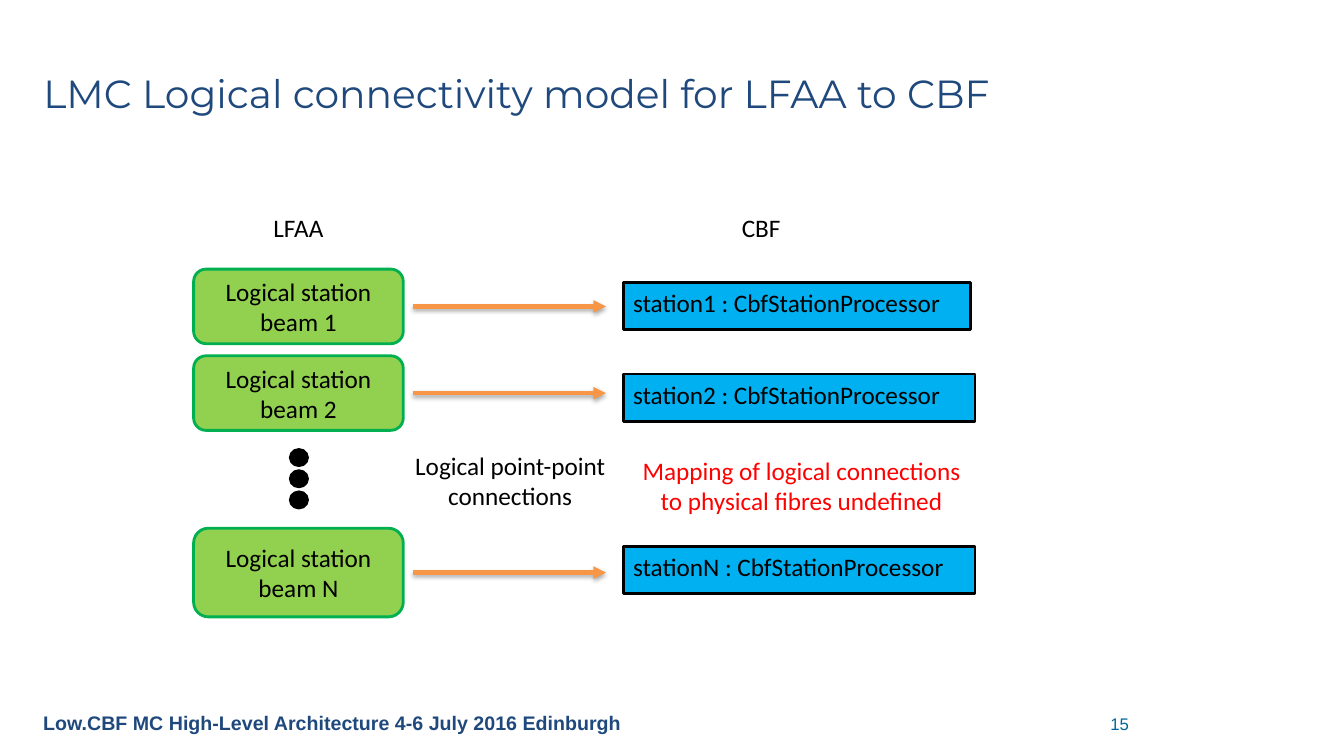
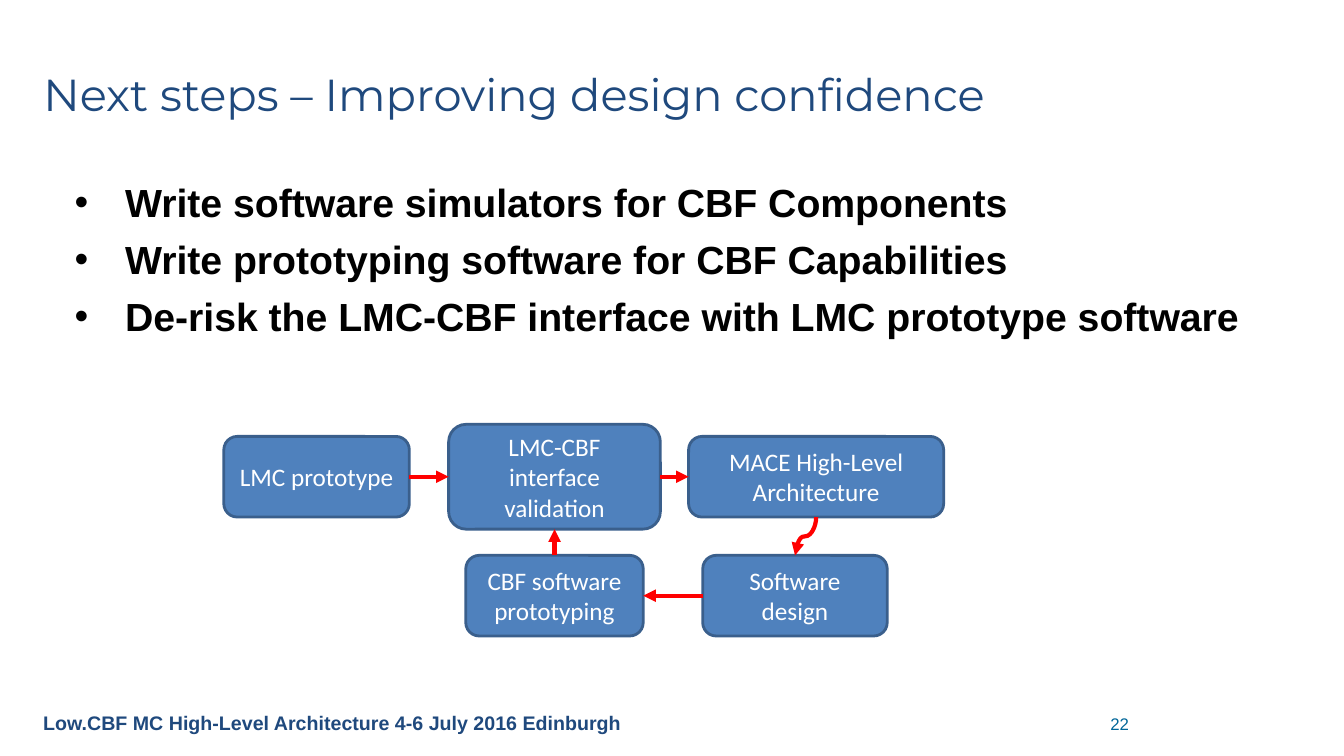
from pptx import Presentation
from pptx.dml.color import RGBColor
from pptx.enum.shapes import MSO_CONNECTOR, MSO_SHAPE
from pptx.enum.text import MSO_ANCHOR, MSO_AUTO_SIZE, PP_ALIGN
from pptx.oxml import parse_xml
from pptx.oxml.ns import nsdecls, qn
from pptx.util import Emu, Pt

EMU_PER_PX = 9144  # 100 px to the inch

COLOURS = {
    "navy": "1F497D", "teal": "006699", "black": "000000", "white": "FFFFFF",
    "red": "FF0000", "orange": "F79646", "lime": "92D050", "green": "00B050",
    "sky": "00B0F0", "blue": "4F81BD", "steel": "3A5F8C",
}

TITLE = {"name": "Montserrat", "size": Pt(28), "bold": False}
BULLET = {"name": "Arial", "size": Pt(28), "bold": True}
FOOTER = {"name": "Arial", "size": Pt(14), "bold": True}
PAGE_NUMBER = {"name": "Arial", "size": Pt(12), "bold": False}
LABEL = {"name": "Calibri", "size": Pt(18), "bold": False}

FOOTER_TEXT = "Low.CBF MC High-Level Architecture 4-6 July 2016 Edinburgh"
TOP, LEFT, BOTTOM, RIGHT = range(4)
TITLE_ONLY, TITLE_AND_BODY = 5, 1

SHADOW = (
    '<a:outerShdw blurRad="40000" dist="23000" dir="5400000" rotWithShape="0">'
    '<a:srgbClr val="000000"><a:alpha val="35000"/></a:srgbClr></a:outerShdw>'
)


def px(length):
    return Emu(round(length * EMU_PER_PX))


def rgb(colour):
    return RGBColor.from_string(COLOURS[colour])


def write_text(shape, lines, style, colour="black", align=PP_ALIGN.CENTER,
               anchor=MSO_ANCHOR.TOP):
    frame = shape.text_frame
    frame.word_wrap = True
    frame.auto_size = MSO_AUTO_SIZE.NONE
    frame.vertical_anchor = anchor
    frame.text = "\n".join(lines)
    for para in frame.paragraphs:
        para.alignment = align
        for span in para.runs:
            for name, value in style.items():
                setattr(span.font, name, value)
            span.font.color.rgb = rgb(colour)


def place(shape, left, top, width, height):
    shape.left, shape.top = px(left), px(top)
    shape.width, shape.height = px(width), px(height)


def add_label(page, area, lines, style=LABEL, **options):
    box = page.shapes.add_textbox(*map(px, area))
    write_text(box, lines, style, **options)


def add_box(page, kind, area, fill, line):
    box = page.shapes.add_shape(kind, *map(px, area))
    box.shadow.inherit = False
    box.fill.solid()
    box.fill.fore_color.rgb = rgb(fill)
    box.line.color.rgb = rgb(line)
    box.line.width = Pt(2)
    return box


def add_rounded_box(page, area, text, fill, line, colour):
    box = add_box(page, MSO_SHAPE.ROUNDED_RECTANGLE, area, fill, line)
    write_text(box, [text], LABEL, colour, anchor=MSO_ANCHOR.MIDDLE)
    return box


def add_arrow(page, colour, start=(0, 0), end=(0, 0), kind=MSO_CONNECTOR.STRAIGHT,
              effect=""):
    arrow = page.shapes.add_connector(kind, *map(px, start + end))
    arrow.line.color.rgb = rgb(colour)
    arrow.line.width = Pt(3)
    properties = arrow.element.spPr
    properties.find(qn("a:ln")).append(
        parse_xml(f'<a:tailEnd type="triangle" {nsdecls("a")}/>'))
    properties.append(
        parse_xml(f'<a:effectLst {nsdecls("a")}>{effect}</a:effectLst>'))
    return arrow


def join(page, source, source_side, target, target_side,
         kind=MSO_CONNECTOR.STRAIGHT):
    arrow = add_arrow(page, "red", kind=kind)
    arrow.begin_connect(source, source_side)
    arrow.end_connect(target, target_side)
    return arrow


def turn_downward(arrow):
    """Make a curve that runs down and to the left leave and arrive vertically."""
    across, down = arrow.width, arrow.height
    arrow.left, arrow.top = (Emu(arrow.left + (across - down) // 2),
                             Emu(arrow.top + (down - across) // 2))
    arrow.width, arrow.height = down, across
    frame = arrow.element.spPr.find(qn("a:xfrm"))
    for name, value in {"rot": "5400000", "flipH": "0", "flipV": "0"}.items():
        frame.set(name, value)


def add_page(deck, layout, title, number, title_size):
    """Add a slide with the shared title style, footer and page number."""
    page = deck.slides.add_slide(deck.slide_layouts[layout])
    place(page.shapes.title, 33, 30, 1267, 125)
    write_text(page.shapes.title, [title], TITLE | {"size": Pt(title_size)}, "navy",
               PP_ALIGN.LEFT, MSO_ANCHOR.MIDDLE)
    add_label(page, (33, 700, 633, 34), [FOOTER_TEXT], FOOTER,
              colour="navy", align=PP_ALIGN.LEFT)
    add_label(page, (1044, 703, 133, 30), [str(number)], PAGE_NUMBER, colour="teal")
    return page


def add_bullets(page, lines):
    body = page.placeholders[1]
    place(body, 64, 172, 1200, 207)
    write_text(body, lines, BULLET, align=PP_ALIGN.LEFT)
    for index, para in enumerate(body.text_frame.paragraphs):
        properties = para._p.get_or_add_pPr()
        properties.set("marL", str(px(50)))
        properties.set("indent", str(px(-50)))
        para.space_before = Pt(7 if index else 0)


def build_connectivity(deck):
    page = add_page(deck, TITLE_ONLY,
                    "LMC Logical connectivity model for LFAA to CBF", 15, 28)
    add_label(page, (226, 206, 140, 40), ["LFAA"])
    add_label(page, (685, 206, 140, 40), ["CBF"])

    # Name, beam top, beam height, processor top, processor width
    stations = [
        ("1", 267, 74, 280, 345),
        ("2", 353, 74, 371, 349),
        ("N", 524, 88, 542, 349),
    ]
    for name, beam_top, beam_height, processor_top, processor_width in stations:
        add_rounded_box(page, (192, beam_top, 208, beam_height),
                        f"Logical station beam {name}", "lime", "green", "black")
        processor = add_box(page, MSO_SHAPE.RECTANGLE,
                            (618, processor_top, processor_width, 47), "sky", "black")
        write_text(processor, [f"station{name} : CbfStationProcessor"], LABEL,
                   align=PP_ALIGN.LEFT)
        middle = beam_top + beam_height // 2
        add_arrow(page, "orange", (410, middle), (601, middle), effect=SHADOW)

    for index in range(3):
        add_box(page, MSO_SHAPE.OVAL, (288, 446 + 21 * index, 17, 16),
                "black", "black")
    add_label(page, (394, 442, 224, 71), ["Logical point-point connections"])
    add_label(page, (615, 447, 360, 71),
              ["Mapping of logical connections", "to physical fibres undefined"],
              colour="red")


def build_next_steps(deck):
    page = add_page(deck, TITLE_AND_BODY,
                    "Next steps – Improving design confidence", 22, 32)
    add_bullets(page, [
        "Write software simulators for CBF Components",
        "Write prototyping software for CBF Capabilities",
        "De-risk the LMC-CBF interface with LMC prototype software",
    ])
    steps = [
        ("LMC prototype", (222, 433, 184, 80)),
        ("LMC-CBF interface validation", (445, 421, 210, 104)),
        ("MACE High-Level Architecture", (683, 433, 253, 80)),
        ("Software design", (697, 551, 183, 80)),
        ("CBF software prototyping", (462, 551, 176, 80)),
    ]
    prototype, validation, architecture, design, prototyping = [
        add_rounded_box(page, area, text, "blue", "steel", "white")
        for text, area in steps
    ]
    join(page, prototype, RIGHT, validation, LEFT)
    join(page, validation, RIGHT, architecture, LEFT)
    join(page, design, LEFT, prototyping, RIGHT)
    join(page, prototyping, TOP, validation, BOTTOM)
    turn_downward(join(page, architecture, BOTTOM, design, TOP, MSO_CONNECTOR.CURVE))


def main():
    deck = Presentation()
    deck.slide_width, deck.slide_height = px(1333), px(750)
    build_connectivity(deck)
    build_next_steps(deck)
    deck.save("out.pptx")


if __name__ == "__main__":
    main()
